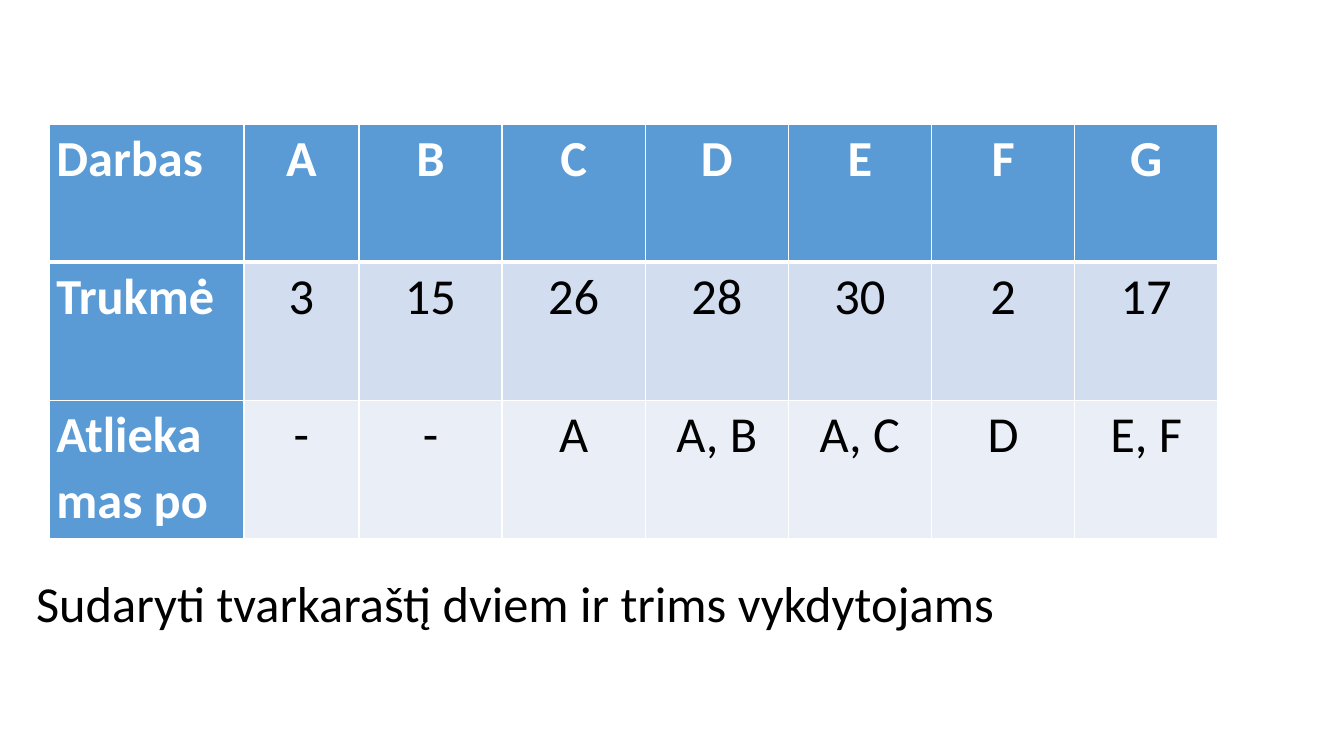
import pptx
import pptx.util
import pptx.dml.color
import pptx.enum.text
import pptx.oxml
import pptx.oxml.ns

COLORS = {"header": "5B9BD5", "odd": "D2DEEF", "even": "EAEFF7",
          "white": "FFFFFF", "black": "000000"}
FONT = {"name": "Calibri", "size": pptx.util.Pt(36)}
CELL = {"margin_left": pptx.util.Inches(0.07), "margin_right": pptx.util.Inches(0.07),
        "margin_top": 0, "margin_bottom": 0}
ALIGN = pptx.enum.text.PP_ALIGN
JOBS = [
    ["Darbas", "A", "B", "C", "D", "E", "F", "G"],
    ["Trukmė", "3", "15", "26", "28", "30", "2", "17"],
    ["Atliekamas po", "-", "-", "A", "A, B", "A, C", "D", "E, F"],
]
COLUMNS = [1.93, 1.14] + [1.42] * 6
ROW_HEIGHT = 1.37


def rgb(name):
    """Return the named colour."""
    return pptx.dml.color.RGBColor.from_string(COLORS[name])


def set_attrs(obj, values):
    """Set each attribute in a dict of format values."""
    for name, value in values.items():
        setattr(obj, name, value)


def write(tf, text, color, bold=False, **paragraph):
    """Write one formatted paragraph into a text frame."""
    p = tf.paragraphs[0]
    set_attrs(p, paragraph)
    r = p.add_run()
    r.text = text
    set_attrs(r.font, {**FONT, "bold": bold})
    r.font.color.rgb = rgb(color)


def add_borders(cell, widths):
    """Draw white cell borders with widths in points by side."""
    tc_pr = cell._tc.get_or_add_tcPr()
    for i, (side, width) in enumerate(widths.items()):
        ln = pptx.oxml.parse_xml(
            f'<a:ln{side} {pptx.oxml.ns.nsdecls("a")} w="{pptx.util.Pt(width)}">'
            f'<a:solidFill><a:srgbClr val="{COLORS["white"]}"/></a:solidFill></a:ln{side}>')
        tc_pr.insert(i, ln)


def add_job_table(s, left, top):
    """Add the table of jobs, durations and predecessors."""
    inches = pptx.util.Inches
    table = s.shapes.add_table(
        len(JOBS), len(COLUMNS), inches(left), inches(top),
        inches(sum(COLUMNS)), inches(ROW_HEIGHT * len(JOBS))).table
    for column, width in zip(table.columns, COLUMNS):
        column.width = inches(width)
    for i, values in enumerate(JOBS):
        table.rows[i].height = inches(ROW_HEIGHT)
        for j, text in enumerate(values):
            cell = table.cell(i, j)
            header = i == 0 or j == 0
            set_attrs(cell, CELL)
            cell.fill.solid()
            cell.fill.fore_color.rgb = rgb("header" if header else "odd" if i % 2 else "even")
            add_borders(cell, {"L": 1, "R": 1, "T": 3 if i == 1 else 1, "B": 3 if i == 0 else 1})
            write(cell.text_frame, text, "white" if header else "black", header,
                  alignment=ALIGN.CENTER if j else ALIGN.LEFT, line_spacing=1.07)


def add_task(s, text, left, top, width, height):
    """Add the task statement as a wrapped text box."""
    sp = s.shapes.add_textbox(*map(pptx.util.Inches, (left, top, width, height)))
    sp.text_frame.word_wrap = True
    write(sp.text_frame, text, "black")


def main():
    """Build and save the slide."""
    prs = pptx.Presentation()
    prs.slide_width = pptx.util.Inches(13.33)
    prs.slide_height = pptx.util.Inches(7.5)
    s = prs.slides.add_slide(prs.slide_layouts[6])
    add_job_table(s, 0.49, 1.23)
    add_task(s, "Sudaryti tvarkaraštį dviem ir trims vykdytojams", 0.26, 5.63, 13.07, 1.31)
    prs.save("out.pptx")


if __name__ == "__main__":
    main()
